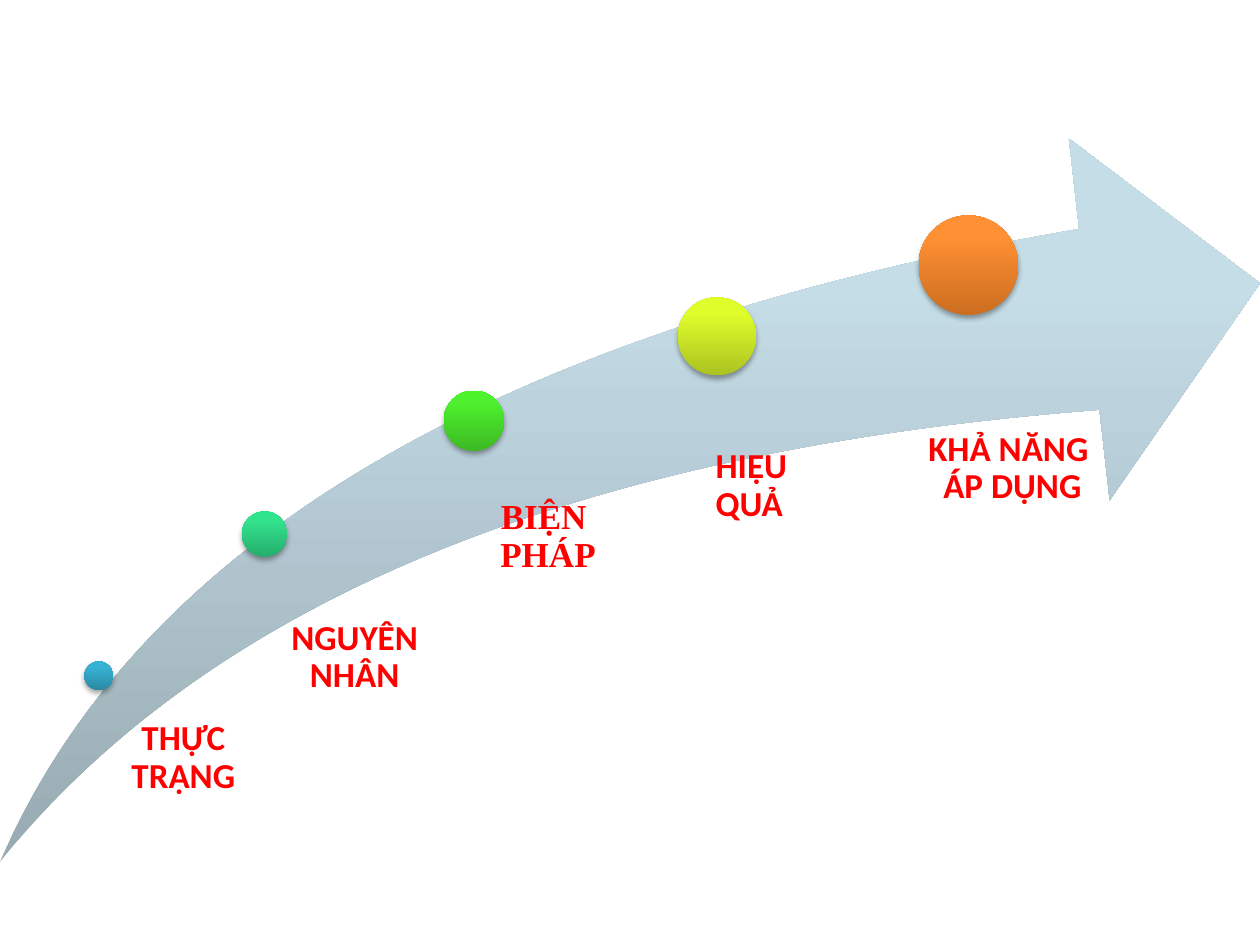
import copy

import lxml.etree
import pptx
import pptx.dml.color
import pptx.enum.shapes
import pptx.enum.text
import pptx.oxml
import pptx.oxml.ns
import pptx.util

Inches = pptx.util.Inches
Pt = pptx.util.Pt
SHAPE = pptx.enum.shapes.MSO_SHAPE
ALIGN = pptx.enum.text.PP_ALIGN
qn = pptx.oxml.ns.qn

STOP_POSITIONS = (0, 0.8, 1)
ARROW_COLORS = ("98AAB2", "C5DDE7", "C6DEE9")
LABEL_FONT = {"size": Pt(20), "bold": True}
LABEL_PARAGRAPH = {"line_spacing": 0.9, "space_after": Pt(6)}

MILESTONES = [
    {"dot": (0.67, 4.15, 0.23), "colors": ("2A88A2", "37B1D2", "34B4D6"),
     "label": (0.74, 4.62, 1.31, 1.06), "inset": 0.12, "text": "THỰC TRẠNG"},
    {"dot": (1.92, 2.96, 0.36), "colors": ("26AE6D", "32E28D", "2EE68E"),
     "label": (1.89, 3.82, 1.66, 0.96), "inset": 0.19, "text": "NGUYÊN NHÂN"},
    {"dot": (3.52, 2, 0.48), "colors": ("3CB923", "4EF02E", "4CF52A"),
     "label": (3.26, 2.86, 1.93, 0.81), "inset": 0.25, "text": "BIỆN \vPHÁP",
     "font": "Times New Roman"},
    {"dot": (5.38, 1.26, 0.62), "colors": ("ACC321", "DFFD2B", "E1FF2B"),
     "label": (5.35, 2.46, 2, 1.16), "inset": 0.33, "text": "HIỆU \vQUẢ",
     "align": ALIGN.LEFT},
    {"dot": (7.29, 0.61, 0.79), "colors": ("CC6E20", "FF9034", "FF9136"),
     "label": (6.2, 2.32, 3.25, 1.25), "inset": 0.42, "text": "KHẢ NĂNG \vÁP DỤNG"},
]


def rgb(value):
    """Return the colour for a hex string."""
    return pptx.dml.color.RGBColor.from_string(value)


def apply_format(target, values):
    """Set each named attribute on the target."""
    for name, value in values.items():
        setattr(target, name, value)


def add_gradient_shape(shapes, kind, left, top, width, height, colors):
    """Add a borderless preset shape shaded from bottom to top."""
    shape = shapes.add_shape(kind, Inches(left), Inches(top), Inches(width), Inches(height))
    shape.shadow.inherit = False
    shape.line.fill.background()
    shape.fill.gradient()
    shape.fill.gradient_angle = 90
    stop_list = shape._element.spPr.find(qn("a:gradFill")).find(qn("a:gsLst"))
    stop_list.append(copy.deepcopy(stop_list[-1]))
    for stop, position, color in zip(shape.fill.gradient_stops, STOP_POSITIONS, colors):
        stop.position = position
        stop.color.rgb = rgb(color)
    return shape


def add_soft_shadow(shape):
    """Give the shape a soft shadow falling straight down."""
    effects = shape._element.spPr.find(qn("a:effectLst"))
    shadow = lxml.etree.SubElement(
        effects, qn("a:outerShdw"), blurRad=str(Pt(3.1)), dist=str(Pt(1.8)),
        dir="5400000", rotWithShape="0")
    color = lxml.etree.SubElement(shadow, qn("a:srgbClr"), val="000000")
    lxml.etree.SubElement(color, qn("a:alpha"), val="35000")


def add_label(shapes, left, top, width, height, milestone):
    """Add the red caption of one milestone."""
    label = shapes.add_textbox(Inches(left), Inches(top), Inches(width), Inches(height))
    frame = label.text_frame
    apply_format(frame, {
        "word_wrap": True, "margin_left": Inches(milestone["inset"]),
        "margin_top": 0, "margin_right": 0, "margin_bottom": 0})
    paragraph = frame.paragraphs[0]
    paragraph.text = milestone["text"]
    apply_format(paragraph, LABEL_PARAGRAPH)
    paragraph.alignment = milestone.get("align", ALIGN.CENTER)
    for run in paragraph.runs:
        apply_format(run.font, LABEL_FONT)
        run.font.name = milestone.get("font", "Calibri")
        run.font.color.rgb = rgb("FF0000")


def add_roadmap(slide, left, top, width, height):
    """Draw the rising arrow with its milestones inside the given box."""
    shapes = slide.shapes.add_group_shape().shapes
    arrow = add_gradient_shape(
        shapes, SHAPE.SWOOSH_ARROW, left, top, width, height, ARROW_COLORS)
    arrow.adjustments[0] = 0.25
    arrow.adjustments[1] = 0.25
    for milestone in MILESTONES:
        dot_x, dot_y, size = milestone["dot"]
        dot = add_gradient_shape(
            shapes, SHAPE.OVAL, left + dot_x, top + dot_y, size, size, milestone["colors"])
        add_soft_shadow(dot)
        label_x, label_y, label_width, label_height = milestone["label"]
        add_label(shapes, left + label_x, top + label_y, label_width, label_height, milestone)


def main():
    """Build and save the presentation."""
    presentation = pptx.Presentation()
    presentation.slide_width = Inches(10)
    presentation.slide_height = Inches(7.5)
    slide = presentation.slides.add_slide(presentation.slide_layouts[6])
    add_roadmap(slide, 0, 1.1, 10, 5.74)
    presentation.save("out.pptx")


if __name__ == "__main__":
    main()
